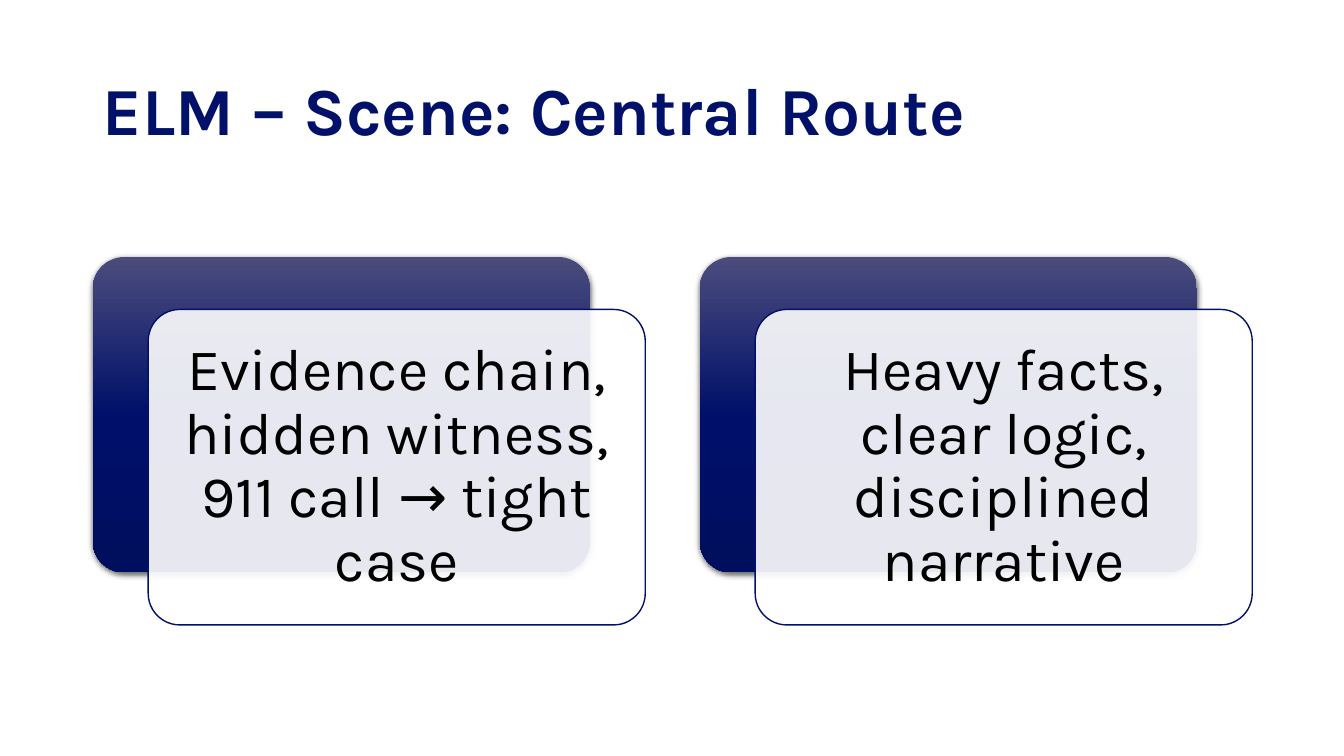
from lxml import etree
from pptx import Presentation
from pptx.dml.color import RGBColor
from pptx.enum.shapes import MSO_SHAPE
from pptx.enum.text import MSO_ANCHOR, PP_ALIGN
from pptx.oxml.ns import qn
from pptx.util import Pt

PX = 9144  # 100 px to the inch
FONT = "Karla"
NAVY = RGBColor(0x01, 0x11, 0x69)
BLACK = RGBColor(0, 0, 0)
WHITE = RGBColor(0xFF, 0xFF, 0xFF)
SHADE = [
    (0, RGBColor(0x4B, 0x4C, 0x7C)),
    (50, RGBColor(0x00, 0x10, 0x6A)),
    (100, RGBColor(0x00, 0x0E, 0x5E)),
]
ROUND = MSO_SHAPE.ROUNDED_RECTANGLE
MIDDLE = MSO_ANCHOR.MIDDLE
CENTER = PP_ALIGN.CENTER

LEFT, TOP = 92, 255
WIDTH, HEIGHT = 493, 313
STEP = 602
SHIFT_X, SHIFT_Y = 55, 52
INSET = 17
CARDS = [
    "Evidence chain, hidden witness, 911 call → tight case",
    "Heavy facts, clear logic, disciplined narrative",
]


def add_node(parent, tag, **attrs):
    return etree.SubElement(parent, qn(tag), {k: str(v) for k, v in attrs.items()})


def add_color(parent, color, alpha=100):
    node = add_node(parent, "a:srgbClr", val=color)
    if alpha < 100:
        add_node(node, "a:alpha", val=alpha * 1000)


def set_text(frame, text, size, color, bold=False):
    frame.word_wrap = True
    frame.vertical_anchor = MIDDLE
    para = frame.paragraphs[0]
    para.text = text
    para.line_spacing = 0.9
    font = para.font
    font.name, font.size, font.bold = FONT, Pt(size), bold
    font.color.rgb = color
    return para


def add_title(slide, text):
    title = slide.shapes.title
    title.left, title.top = 92 * PX, 40 * PX
    title.width, title.height = 1150 * PX, 145 * PX
    para = set_text(title.text_frame, text, 48, NAVY, True)
    para.alignment = PP_ALIGN.LEFT


def add_panel(slide, x, y):
    panel = slide.shapes.add_shape(ROUND, x * PX, y * PX, WIDTH * PX, HEIGHT * PX)
    panel.adjustments[0] = 0.1
    panel.shadow.inherit = False
    return panel


def add_back(slide, x, y):
    """Add the shaded panel with its soft shadow."""
    panel = add_panel(slide, x, y)
    panel.line.fill.background()
    panel.fill.gradient()
    props = panel.element.spPr
    stops = props.find(".//" + qn("a:gsLst"))
    for old in list(stops):
        stops.remove(old)
    for pos, color in SHADE:
        add_color(add_node(stops, "a:gs", pos=pos * 1000), color)
    props.find(".//" + qn("a:lin")).set("ang", "5400000")
    shadow = add_node(
        props.find(qn("a:effectLst")), "a:outerShdw",
        blurRad=Pt(4.5), dist=Pt(1.5), dir=5400000, rotWithShape=0,
    )
    add_color(shadow, BLACK, 63)


def add_front(slide, x, y, text):
    """Add the translucent outlined panel that holds the text."""
    panel = add_panel(slide, x, y)
    panel.fill.solid()
    panel.fill.fore_color.rgb = WHITE
    tint = panel.element.spPr.find(qn("a:solidFill")).find(qn("a:srgbClr"))
    add_node(tint, "a:alpha", val=90000)
    panel.line.color.rgb = NAVY
    panel.line.width = Pt(1)
    frame = panel.text_frame
    frame.margin_left = frame.margin_right = INSET * PX
    frame.margin_top = frame.margin_bottom = INSET * PX
    set_text(frame, text, 42, BLACK).alignment = CENTER


def main():
    deck = Presentation()
    deck.slide_width, deck.slide_height = 1333 * PX, 750 * PX
    slide = deck.slides.add_slide(deck.slide_layouts[5])
    add_title(slide, "ELM – Scene: Central Route")
    for i, text in enumerate(CARDS):
        x = LEFT + i * STEP
        add_back(slide, x, TOP)
        add_front(slide, x + SHIFT_X, TOP + SHIFT_Y, text)
    deck.save("out.pptx")


if __name__ == "__main__":
    main()
